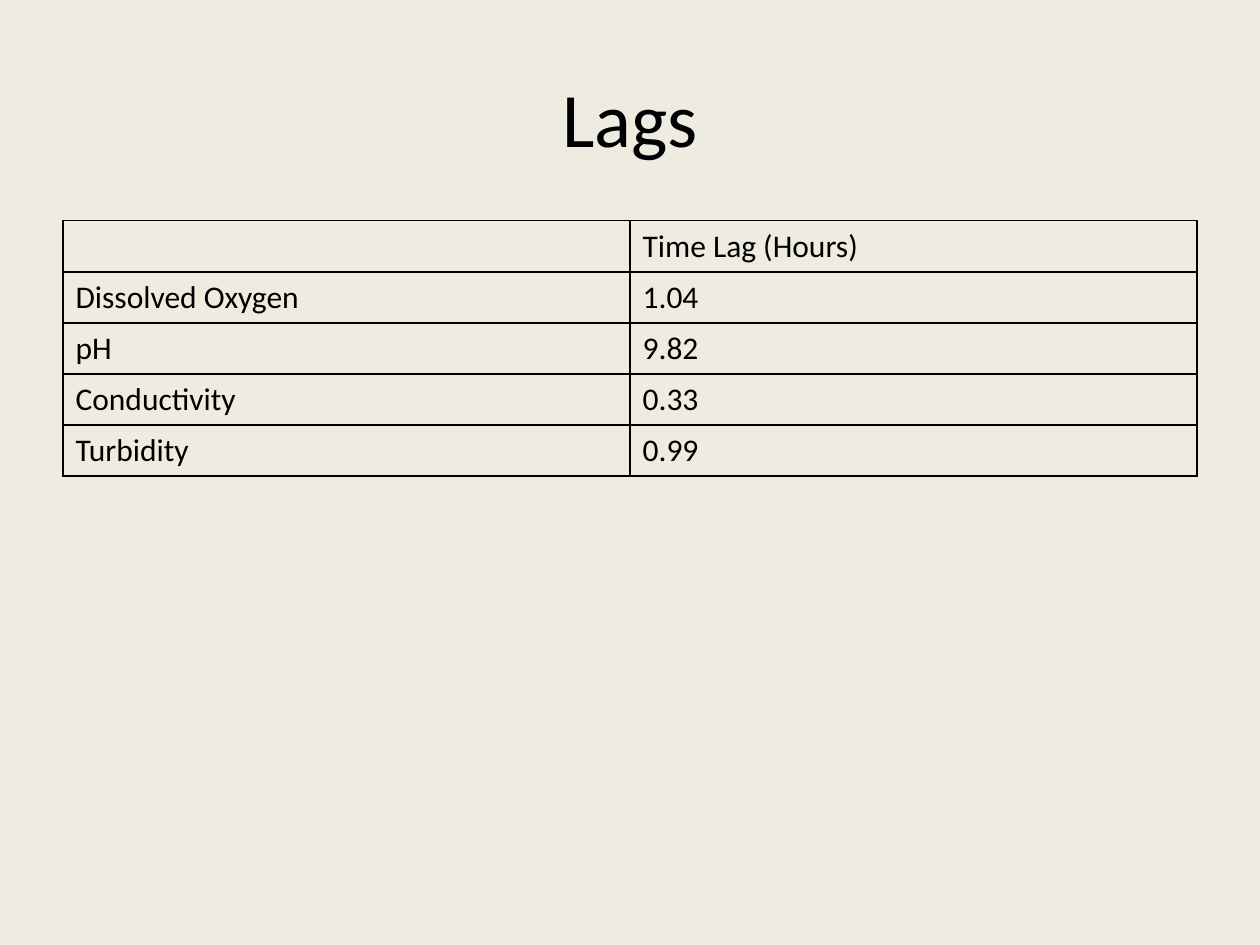
from dataclasses import dataclass

from lxml import etree
from pptx import Presentation
from pptx.dml.color import RGBColor
from pptx.enum.text import MSO_ANCHOR, PP_ALIGN
from pptx.oxml.ns import qn
from pptx.util import Cm, Pt

LEFT, CENTER = PP_ALIGN.LEFT, PP_ALIGN.CENTER
TOP, MIDDLE = MSO_ANCHOR.TOP, MSO_ANCHOR.MIDDLE


@dataclass(frozen=True)
class Theme:
    font: str = "Calibri"
    ink: str = "000000"
    paper: str = "EEECE1"
    title: int = 44
    body: int = 18
    rule: int = 1


THEME = Theme()
LAGS = [
    ("", "Time Lag (Hours)"),
    ("Dissolved Oxygen", "1.04"),
    ("pH", "9.82"),
    ("Conductivity", "0.33"),
    ("Turbidity", "0.99"),
]


def write(frame, text, size=THEME.body, align=LEFT, anchor=TOP):
    frame.word_wrap = True
    frame.vertical_anchor = anchor
    line = frame.paragraphs[0]
    line.alignment = align
    line.font.size = Pt(size)
    if text:
        run = line.add_run()
        run.text = text
        run.font.name = THEME.font
        run.font.size = Pt(size)
        run.font.color.rgb = RGBColor.from_string(THEME.ink)


def add_title(slide, text):
    box = slide.shapes.add_textbox(Cm(1.27), Cm(0.76), Cm(22.86), Cm(3.18))
    write(box.text_frame, text, size=THEME.title, align=CENTER, anchor=MIDDLE)


def frame_cell(cell):
    props = cell._tc.get_or_add_tcPr()
    for side in ("lnL", "lnR", "lnT", "lnB"):
        edge = etree.SubElement(props, qn(f"a:{side}"), w=str(Pt(THEME.rule)))
        fill = etree.SubElement(edge, qn("a:solidFill"))
        etree.SubElement(fill, qn("a:srgbClr"), val=THEME.ink)
    cell.fill.background()


def add_grid(slide, data):
    width, height = Cm(11.43), Cm(1.03)
    rows, cols = len(data), len(data[0])
    grid = slide.shapes.add_table(
        rows, cols, Cm(1.27), Cm(4.45), width * cols, height * rows
    ).table
    grid.first_row = False
    grid.horz_banding = False
    for row, texts in zip(grid.rows, data):
        for cell, text in zip(row.cells, texts):
            frame_cell(cell)
            write(cell.text_frame, text)


def main():
    deck = Presentation()
    deck.slide_width, deck.slide_height = Cm(25.4), Cm(19.05)
    slide = deck.slides.add_slide(deck.slide_layouts[6])
    back = slide.background.fill
    back.solid()
    back.fore_color.rgb = RGBColor.from_string(THEME.paper)
    add_title(slide, "Lags")
    add_grid(slide, LAGS)
    deck.save("out.pptx")


if __name__ == "__main__":
    main()
